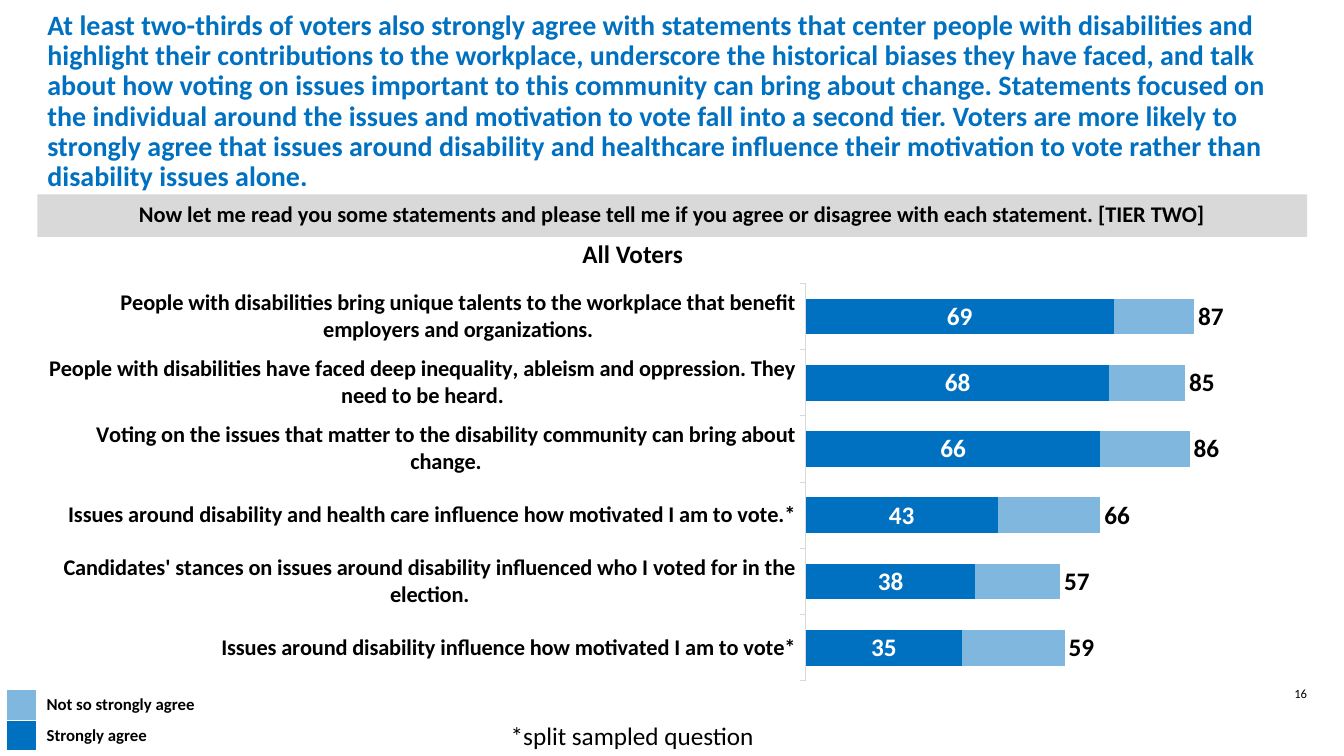
from dataclasses import dataclass

from lxml.etree import SubElement
from pptx import Presentation
from pptx.chart.data import CategoryChartData
from pptx.dml.color import RGBColor
from pptx.enum.chart import XL_CHART_TYPE, XL_LABEL_POSITION, XL_TICK_LABEL_POSITION, XL_TICK_MARK
from pptx.enum.shapes import MSO_SHAPE
from pptx.enum.text import MSO_ANCHOR, MSO_AUTO_SIZE, PP_ALIGN
from pptx.oxml import parse_xml
from pptx.oxml.ns import nsdecls, qn
from pptx.util import Cm, Pt


@dataclass(frozen=True)
class Theme:
    """Colours, font and type sizes of the slide."""
    font: str = "Calibri"
    strong: RGBColor = RGBColor(0x00, 0x70, 0xC0)
    mild: RGBColor = RGBColor(0x7F, 0xB7, 0xDF)
    grey: RGBColor = RGBColor(0xD9, 0xD9, 0xD9)
    black: RGBColor = RGBColor(0, 0, 0)
    white: RGBColor = RGBColor(0xFF, 0xFF, 0xFF)
    title: int = 20
    heading: int = 18
    label: int = 16
    legend: int = 12
    small: int = 9


THEME = Theme()

HEADLINE = (
    "At least two-thirds of voters also strongly agree with statements that center people with "
    "disabilities and highlight their contributions to the workplace, underscore the historical "
    "biases they have faced, and talk about how voting on issues important to this community can "
    "bring about change. Statements focused on the individual around the issues and motivation to "
    "vote fall into a second tier. Voters are more likely to strongly agree that issues around "
    "disability and healthcare influence their motivation to vote rather than disability issues alone."
)
QUESTION = (
    "Now let me read you some statements and please tell me if you agree or disagree "
    "with each statement. [TIER TWO]"
)
RESULTS = [
    ("People with disabilities bring unique talents to the workplace that benefit employers "
     "and organizations.", 69, 18, 87),
    ("People with disabilities have faced deep inequality, ableism and oppression. "
     "They need to be heard.", 68, 17, 85),
    ("Voting on the issues that matter to the disability community can bring about change.",
     66, 20, 86),
    ("Issues around disability and health care influence how motivated I am to vote.*", 43, 23, 66),
    ("Candidates' stances on issues around disability influenced who I voted for in the election.",
     38, 19, 57),
    ("Issues around disability influence how motivated I am to vote*", 35, 23, 59),
]


def set_values(target, values):
    """Set each attribute of the target from a dict."""
    for attribute, value in values.items():
        setattr(target, attribute, value)


def style_font(font, size, color=THEME.black, bold=True):
    """Give a font the theme typeface, a size, a colour and a weight."""
    set_values(font, {"name": THEME.font, "size": Pt(size), "bold": bold})
    font.color.rgb = color


def write_text(frame, text, size, color=THEME.black, bold=True, align=PP_ALIGN.LEFT, spacing=None):
    """Write one styled paragraph into a text frame."""
    paragraph = frame.paragraphs[0]
    set_values(paragraph, {"alignment": align, "line_spacing": spacing})
    run = paragraph.add_run()
    run.text = text
    style_font(run.font, size, color, bold)


def add_headline(slide, box):
    """Place the slide title in the box."""
    headline = slide.shapes.title
    set_values(headline, dict(zip(("left", "top", "width", "height"), box)))
    set_values(headline.text_frame, {
        "word_wrap": True, "auto_size": MSO_AUTO_SIZE.NONE, "vertical_anchor": MSO_ANCHOR.MIDDLE})
    write_text(headline.text_frame, HEADLINE, THEME.title, THEME.strong, spacing=0.9)


def add_question(slide, box):
    """Draw the grey band with the survey question."""
    band = slide.shapes.add_shape(MSO_SHAPE.RECTANGLE, *box)
    band.shadow.inherit = False
    band.fill.solid()
    band.fill.fore_color.rgb = THEME.grey
    band.line.fill.background()
    set_values(band.text_frame, {"word_wrap": True, "vertical_anchor": MSO_ANCHOR.MIDDLE})
    write_text(band.text_frame, QUESTION, THEME.label, align=PP_ALIGN.CENTER, spacing=0.9)


def add_caption(slide, box, text, size, bold=False, align=PP_ALIGN.LEFT):
    """Place a short line of text in the box."""
    caption = slide.shapes.add_textbox(*box)
    caption.text_frame.word_wrap = True
    write_text(caption.text_frame, text, size, bold=bold, align=align)


def show_values(series, color, position):
    """Show the values of a series as bold labels."""
    labels = series.data_labels
    set_values(labels, {"show_value": True, "position": position})
    style_font(labels.font, THEME.heading, color)


def fix_plot_area(chart, x, y, w, h):
    """Pin the inner plot area to fractions of the chart."""
    plot_area = chart.element.find(".//" + qn("c:plotArea"))
    for layout in plot_area.findall(qn("c:layout")):
        plot_area.remove(layout)
    fractions = "".join(f'<c:{key} val="{value}"/>' for key, value in (
        ("xMode", "edge"), ("yMode", "edge"), ("x", x), ("y", y), ("w", w), ("h", h)))
    plot_area.insert(0, parse_xml(
        f'<c:layout {nsdecls("c")}><c:manualLayout><c:layoutTarget val="inner"/>'
        f'{fractions}</c:manualLayout></c:layout>'))


def add_results(slide, box):
    """Chart the share of voters agreeing with each statement."""
    statements, strongly, mildly, total = zip(*RESULTS)
    data = CategoryChartData()
    data.categories = statements
    data.add_series("Strongly agree", strongly)
    data.add_series("Not so strongly agree", mildly)
    data.add_series("Total agree", total)
    chart = slide.shapes.add_chart(XL_CHART_TYPE.BAR_STACKED, *box, data).chart
    set_values(chart, {"has_legend": False, "has_title": False})
    style_font(chart.font, THEME.label)
    fix_plot_area(chart, 0.62, 0.02, 0.36, 0.96)

    set_values(chart.value_axis, {"minimum_scale": 0, "maximum_scale": 100,
                                  "has_major_gridlines": False, "visible": False})
    statement_axis = chart.category_axis
    set_values(statement_axis, {
        "reverse_order": True, "has_major_gridlines": False,
        "major_tick_mark": XL_TICK_MARK.OUTSIDE,
        "tick_label_position": XL_TICK_LABEL_POSITION.LOW})
    style_font(statement_axis.tick_labels.font, THEME.label)
    statement_axis.format.line.color.rgb = THEME.grey
    statement_axis.format.line.width = Pt(0.75)

    bars = chart.plots[0]
    set_values(bars, {"gap_width": 86, "overlap": 100, "vary_by_categories": False})
    strong_bars, mild_bars, total_bars = bars.series
    for agreement, color in ((strong_bars, THEME.strong), (mild_bars, THEME.mild)):
        agreement.format.fill.solid()
        agreement.format.fill.fore_color.rgb = color
    total_bars.format.fill.background()
    show_values(strong_bars, THEME.white, XL_LABEL_POSITION.CENTER)
    show_values(total_bars, THEME.black, XL_LABEL_POSITION.INSIDE_BASE)


def add_borders(cell):
    """Give a cell thin white borders on all sides."""
    properties = cell._tc.get_or_add_tcPr()
    for index, side in enumerate(("lnL", "lnR", "lnT", "lnB")):
        properties.insert(index, parse_xml(
            f'<a:{side} {nsdecls("a")} w="12700"><a:solidFill>'
            f'<a:srgbClr val="{THEME.white}"/></a:solidFill></a:{side}>'))


def add_legend(slide, box):
    """Place the colour key as a two-column table."""
    entries = (("Not so strongly agree", THEME.mild), ("Strongly agree", THEME.strong))
    legend = slide.shapes.add_table(len(entries), 2, *box).table
    set_values(legend, {"first_row": False, "horz_banding": False})
    swatch_width = Cm(0.76)
    legend.columns[0].width = swatch_width
    legend.columns[1].width = box[2] - swatch_width
    for row, (meaning, color) in enumerate(entries):
        swatch, name = legend.cell(row, 0), legend.cell(row, 1)
        swatch.fill.solid()
        swatch.fill.fore_color.rgb = color
        SubElement(swatch.text_frame.paragraphs[0]._p, qn("a:endParaRPr"),
                   sz=str(THEME.legend * 100))
        name.fill.background()
        write_text(name.text_frame, meaning, THEME.legend)
        add_borders(swatch)
        add_borders(name)


def main():
    """Build the slide and save it."""
    deck = Presentation()
    set_values(deck, {"slide_width": Cm(33.87), "slide_height": Cm(19.05)})
    slide = deck.slides.add_slide(deck.slide_layouts[5])
    left, width = Cm(0.94), Cm(32)
    add_headline(slide, (left, Cm(0.74), width, Cm(3.66)))
    add_question(slide, (left, Cm(4.9), width, Cm(1.07)))
    add_results(slide, (left, Cm(6.93), Cm(31.24), Cm(10.44)))
    add_legend(slide, (Cm(0.16), Cm(17.38), Cm(5.46), Cm(1.52)))
    add_caption(slide, (Cm(14.43), Cm(5.89), Cm(3.53), Cm(1.02)), "All Voters", THEME.heading, True)
    add_caption(slide, (Cm(12.62), Cm(18.03), Cm(8.64), Cm(1.02)),
                "*split sampled question", THEME.heading)
    add_caption(slide, (Cm(31.83), Cm(17.15), Cm(1.9), Cm(0.84)), "16", THEME.small,
                align=PP_ALIGN.CENTER)
    deck.save("out.pptx")


if __name__ == "__main__":
    main()
